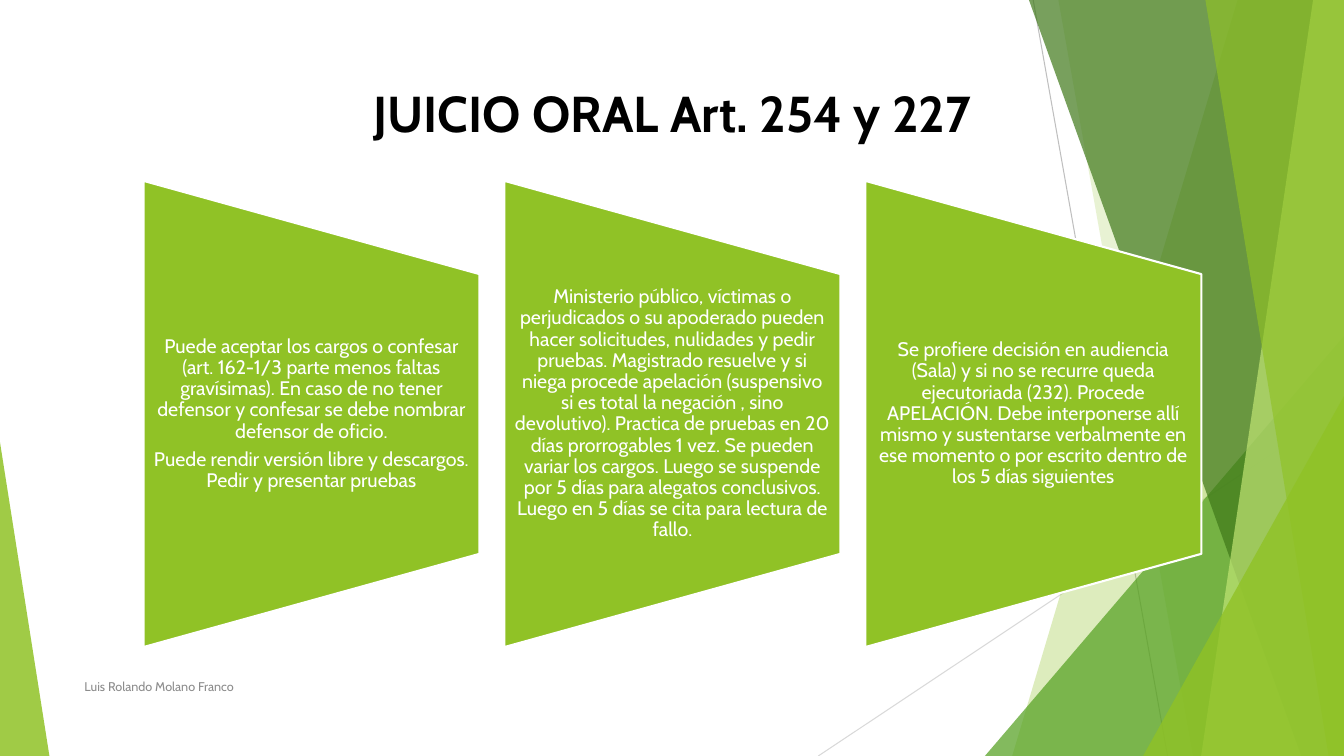
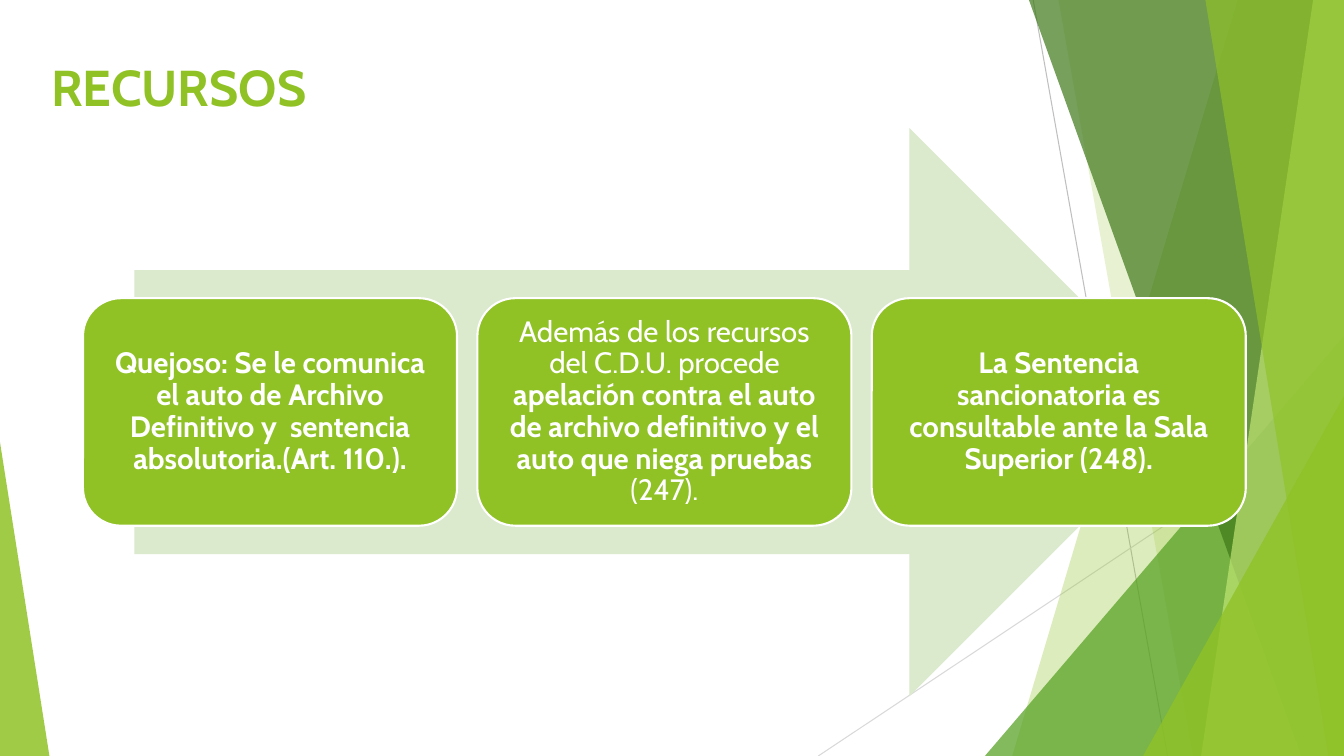
"""Build two slides on oral trial and appeals over a shared faceted green backdrop."""
from pptx import Presentation
from pptx.dml.color import RGBColor
from pptx.enum.shapes import MSO_CONNECTOR, MSO_SHAPE
from pptx.enum.text import MSO_ANCHOR, MSO_AUTO_SIZE, PP_ALIGN
from pptx.oxml.ns import qn
from pptx.util import Pt
from lxml import etree

TRIANGLE, TRAPEZOID = MSO_SHAPE.ISOSCELES_TRIANGLE, MSO_SHAPE.FLOWCHART_MANUAL_OPERATION
ARROW, ROUNDED = MSO_SHAPE.RIGHT_ARROW, MSO_SHAPE.ROUNDED_RECTANGLE
LEFT, CENTER = PP_ALIGN.LEFT, PP_ALIGN.CENTER
TOP, MIDDLE = MSO_ANCHOR.TOP, MSO_ANCHOR.MIDDLE

FONT = "Cabin"
WIDTH, HEIGHT = 960, 540
COLORS = {
    "green": "90C226", "mid": "54A021", "dark": "3F7819", "light": "C0E474",
    "pale": "DBE9CD", "white": "FFFFFF", "black": "000000", "footer": "8C8C8C",
    "line": "BFBFBF", "faint_line": "D9D9D9",
}

BACKDROP_LINES = [
    ((738, 0), (834, 540), "line"),
    ((960, 290), (584.5, 540), "faint_line"),
]
# kind, geometry, colour, opacity
BACKDROP_FACETS = [
    ("band", (884, 723), "green", 30),
    ("band", (756, 852), "green", 20),
    ("triangle", (703.5, 240, 256.5, 300, 1), "mid", 72),
    ("band", (735, 929.5), "dark", 70),
    ("band", (938, 858), "light", 70),
    ("band", (861, 949), "green", 65),
    ("triangle", (816.5, 283, 143.5, 257, 1), "green", 80),
    ("triangle", (0, 316, 35.3, 224, 0), "green", 85),
]

TRIAL_TITLE = "JUICIO ORAL Art. 254 y 227"
TRIAL_STEPS = [
    [
        [("Puede aceptar los cargos o confesar (art. 162-1/3 parte menos faltas gravísimas). "
          "En caso de no tener defensor y confesar se debe nombrar defensor de oficio.", False)],
        [("Puede rendir versión libre y descargos. Pedir y presentar pruebas", False)],
    ],
    [
        [("Ministerio público, víctimas o perjudicados o su apoderado pueden hacer solicitudes, "
          "nulidades y pedir pruebas. Magistrado resuelve y si niega procede apelación "
          "(suspensivo si es total la negación , sino devolutivo). Practica de pruebas en 20 "
          "días prorrogables 1 vez. Se pueden variar los cargos. Luego se suspende por 5 días "
          "para alegatos conclusivos. Luego en 5 días se cita para lectura de fallo.", False)],
    ],
    [
        [("Se profiere decisión en audiencia (Sala) y si no se recurre queda ejecutoriada (232). "
          "Procede APELACIÓN. Debe interponerse allí mismo y sustentarse verbalmente en ese "
          "momento o por escrito dentro de los 5 días siguientes", False)],
    ],
]
FOOTER = "Luis Rolando Molano Franco"

APPEALS_TITLE = "RECURSOS"
APPEALS = [
    [("Quejoso: Se le comunica el auto de Archivo Definitivo y  sentencia "
      "absolutoria.(Art. 110.).", True)],
    [("Además de los recursos del C.D.U. procede ", False),
     ("apelación contra el auto de archivo definitivo y el auto que niega pruebas ", True),
     ("(247).", False)],
    [("La Sentencia sancionatoria es consultable ante la Sala Superior (248).", True)],
]


def rgb(name):
    return RGBColor.from_string(COLORS[name])


def points(*values):
    return [Pt(v) for v in values]


def paint(sp, color, line=None, opacity=None):
    sp.shadow.inherit = False
    sp.fill.solid()
    sp.fill.fore_color.rgb = rgb(color)
    if opacity is not None:
        clr = sp.element.xpath(".//a:solidFill/a:srgbClr")[0]
        etree.SubElement(clr, qn("a:alpha")).set("val", str(opacity * 1000))
    if line:
        sp.line.color.rgb = rgb(line)
        sp.line.width = Pt(1.5)
    else:
        sp.line.fill.background()


def add_shape(s, kind, box, color, line=None, opacity=None):
    sp = s.shapes.add_shape(kind, *points(*box))
    paint(sp, color, line, opacity)
    return sp


def write(sp, paragraphs, size, color, align=CENTER, anchor=MIDDLE, insets=(7.2, 3.6), body=True):
    tf = sp.text_frame
    tf.word_wrap = True
    tf.auto_size = MSO_AUTO_SIZE.NONE
    tf.vertical_anchor = anchor
    tf.margin_left = tf.margin_right = Pt(insets[0])
    tf.margin_top = tf.margin_bottom = Pt(insets[1])
    for i, runs in enumerate(paragraphs):
        p = tf.add_paragraph() if i else tf.paragraphs[0]
        p.alignment = align
        p.font.name, p.font.size = FONT, Pt(size)
        p.font.color.rgb = rgb(color)
        if body:
            p.line_spacing = 0.9
            p.space_after = Pt(size * 0.35)
        for text, bold in runs:
            r = p.add_run()
            r.text, r.font.bold = text, bold


def add_backdrop(s, layout):
    parts = []
    for start, end, color in BACKDROP_LINES:
        line = s.shapes.add_connector(MSO_CONNECTOR.STRAIGHT, *points(*start, *end))
        line.line.color.rgb = rgb(color)
        line.line.width = Pt(0.75)
        etree.SubElement(line.element.spPr, qn("a:effectLst"))
        parts.append(line)
    for kind, geometry, color, opacity in BACKDROP_FACETS:
        if kind == "band":
            top_x, bottom_x = geometry
            outline = s.shapes.build_freeform(Pt(top_x), 0)
            corners = [(WIDTH, 0), (WIDTH, HEIGHT), (bottom_x, HEIGHT)]
            outline.add_line_segments([points(*c) for c in corners], close=True)
            facet = outline.convert_to_shape()
            paint(facet, color, opacity=opacity)
        else:
            *box, apex = geometry
            facet = add_shape(s, TRIANGLE, box, color, opacity=opacity)
            facet.adjustments[0] = apex
        parts.append(facet)
    for number, part in enumerate(parts, 100):
        part.element.xpath(".//p:cNvPr")[0].set("id", str(number))
        layout.shapes.element.append(part.element)


def set_title(s, text, box, color, align):
    title = s.shapes.title
    title.left, title.top, title.width, title.height = points(*box)
    write(title, [[(text, True)]], 36, color, align, TOP, body=False)


def build_trial(s):
    set_title(s, TRIAL_TITLE, (102.2, 55.4, 756, 53.3), "black", CENTER)
    left, step, width, length, middle = 102.5, 257.8, 240, 333, 295.7
    for i, paragraphs in enumerate(TRIAL_STEPS):
        x = left + i * step
        box = (x + (width - length) / 2, middle - width / 2, length, width)
        add_shape(s, TRAPEZOID, box, "green", "white").rotation = 270
        label = s.shapes.add_textbox(*points(x, middle - 100, width, 200))
        write(label, paragraphs, 14, "white", insets=(7.2, 0))
    footer = s.shapes.add_textbox(*points(53.3, 476, 496, 28.8))
    write(footer, [[(FOOTER, False)]], 9, "footer", LEFT, body=False)


def build_appeals(s):
    set_title(s, APPEALS_TITLE, (29.5, 36.7, 908.6, 60.5), "green", LEFT)
    add_shape(s, ARROW, (96, 91.4, 756.5, 406), "pale")
    for i, runs in enumerate(APPEALS):
        card = add_shape(s, ROUNDED, (59.3 + i * 281.7, 213, 267.2, 162.5), "green", "white")
        write(card, [runs], 21, "white", insets=(6.5, 6.5))


def main():
    prs = Presentation()
    prs.slide_width, prs.slide_height = points(WIDTH, HEIGHT)
    layout = prs.slide_layouts[5]
    trial, appeals = [prs.slides.add_slide(layout) for _ in range(2)]
    add_backdrop(trial, layout)
    build_trial(trial)
    build_appeals(appeals)
    prs.save("out.pptx")


if __name__ == "__main__":
    main()
